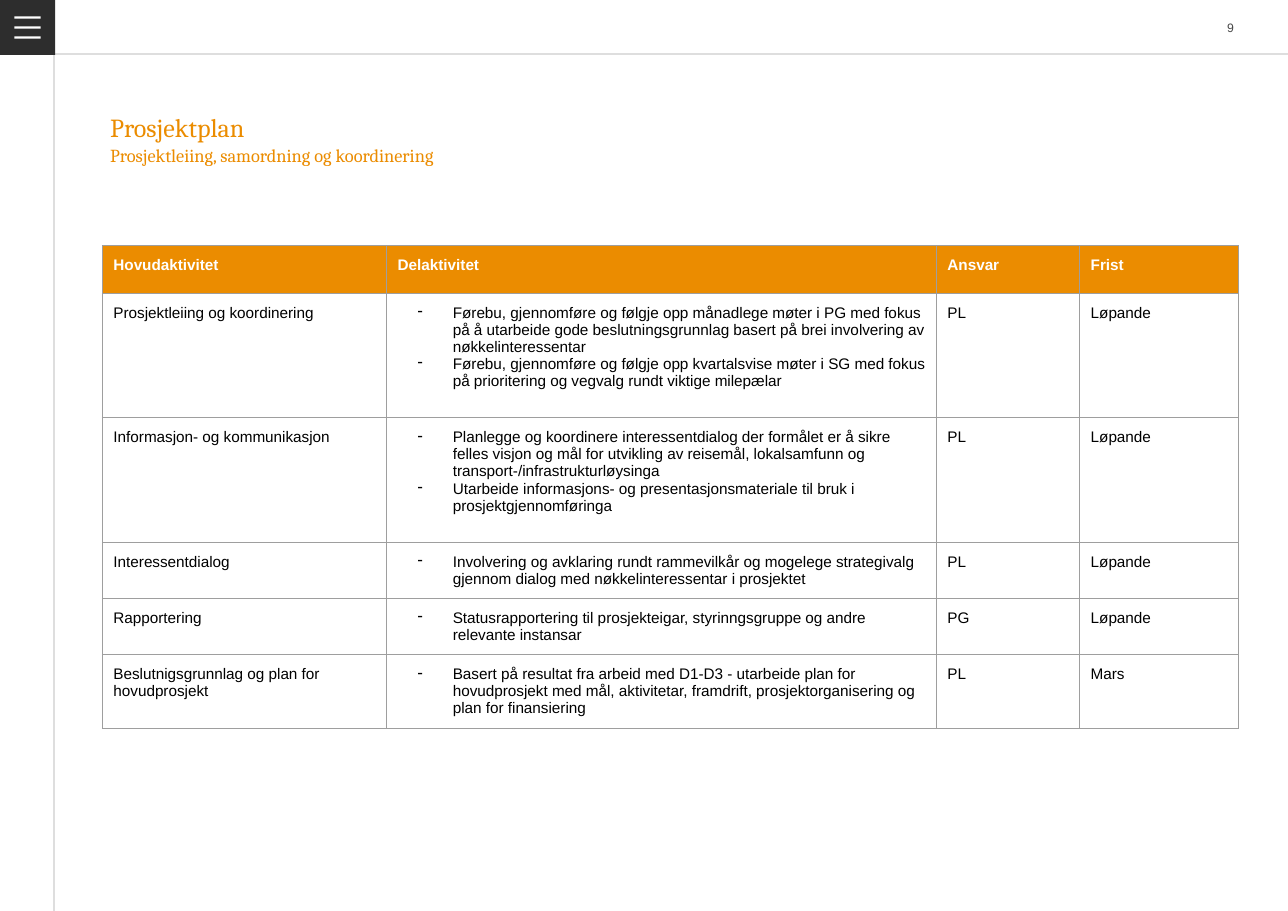
from dataclasses import dataclass

from lxml import etree
from pptx import Presentation
from pptx.dml.color import RGBColor
from pptx.enum.shapes import MSO_CONNECTOR, MSO_SHAPE
from pptx.enum.text import MSO_ANCHOR, MSO_AUTO_SIZE, PP_ALIGN
from pptx.oxml.ns import qn
from pptx.util import Inches, Pt

STRAIGHT = MSO_CONNECTOR.STRAIGHT
RECTANGLE = MSO_SHAPE.RECTANGLE
TOP, MIDDLE = MSO_ANCHOR.TOP, MSO_ANCHOR.MIDDLE
LEFT, RIGHT = PP_ALIGN.LEFT, PP_ALIGN.RIGHT
NO_AUTOFIT = MSO_AUTO_SIZE.NONE
TITLE_ONLY = 5

PAGE_WIDTH, PAGE_HEIGHT = 11.69, 8.27
MODULE = 0.5
PAGE_COLUMNS, PAGE_ROWS = PAGE_WIDTH / MODULE, PAGE_HEIGHT / MODULE

HEADINGS = ("Hovudaktivitet", "Delaktivitet", "Ansvar", "Frist")
ACTIVITIES = (
    ("Prosjektleiing og koordinering",
     ("Førebu, gjennomføre og følgje opp månadlege møter i PG med fokus på å utarbeide gode "
      "beslutningsgrunnlag basert på brei involvering av nøkkelinteressentar",
      "Førebu, gjennomføre og følgje opp kvartalsvise møter i SG med fokus på prioritering og "
      "vegvalg rundt viktige milepælar"),
     "PL", "Løpande"),
    ("Informasjon- og kommunikasjon",
     ("Planlegge og koordinere interessentdialog der formålet er å sikre felles visjon og mål for "
      "utvikling av reisemål, lokalsamfunn og transport-/infrastrukturløysinga",
      "Utarbeide informasjons- og presentasjonsmateriale til bruk i prosjektgjennomføringa"),
     "PL", "Løpande"),
    ("Interessentdialog",
     ("Involvering og avklaring rundt rammevilkår og mogelege strategivalg gjennom dialog med "
      "nøkkelinteressentar i prosjektet",),
     "PL", "Løpande"),
    ("Rapportering",
     ("Statusrapportering til prosjekteigar, styrinngsgruppe og andre relevante instansar",),
     "PG", "Løpande"),
    ("Beslutnigsgrunnlag og plan for hovudprosjekt",
     ("Basert på resultat fra arbeid med D1-D3 - utarbeide plan for hovudprosjekt med mål, "
      "aktivitetar, framdrift, prosjektorganisering og plan for finansiering",),
     "PL", "Mars"),
)
COLUMN_SPANS = (5.16, 9.98, 2.6, 2.88)
ROW_SPANS = (0.87, 2.26, 2.26, 1.02, 1.02, 1.32)


@dataclass(frozen=True)
class Theme:
    """Colours, fonts and type sizes of the plan."""
    accent: str = "EB8C00"
    dark: str = "2D2D2D"
    white: str = "FFFFFF"
    ink: str = "000000"
    number: str = "464646"
    rule: str = "DEDEDE"
    border: str = "9E9E9E"
    heading_font: str = "Cambria"
    body_font: str = "Arial"
    title_size: float = 17
    subtitle_size: float = 12
    table_size: float = 10
    number_size: float = 8
    line_width: float = 0.75


def grid(*spans):
    """Turn grid modules into lengths."""
    return [Inches(span * MODULE) for span in spans]


class PlanSlide:
    """Draws the plan's elements on one slide in one theme."""

    def __init__(self, slide, theme):
        """Keep the slide and the theme."""
        self.slide, self.theme = slide, theme

    def style(self, paragraph, size, colour, font, bold=False):
        """Format every run of a paragraph."""
        for run in paragraph.runs:
            run.font.size, run.font.name, run.font.bold = Pt(size), font, bold
            run.font.color.rgb = RGBColor.from_string(colour)

    def paint(self, shape, colour):
        """Give a shape a flat fill without outline or shadow."""
        shape.shadow.inherit = False
        shape.fill.solid()
        shape.fill.fore_color.rgb = RGBColor.from_string(colour)
        shape.line.fill.background()

    def frame(self, text_frame, anchor):
        """Remove the margins of a text frame and set its anchor."""
        text_frame.word_wrap = True
        text_frame.auto_size = NO_AUTOFIT
        text_frame.vertical_anchor = anchor
        text_frame.margin_left = text_frame.margin_right = 0
        text_frame.margin_top = text_frame.margin_bottom = 0

    def rule(self, *ends):
        """Draw a thin page rule."""
        rule = self.slide.shapes.add_connector(STRAIGHT, *grid(*ends))
        rule.line.color.rgb = RGBColor.from_string(self.theme.rule)
        rule.line.width = Pt(self.theme.line_width)
        etree.SubElement(rule._element.spPr, qn("a:effectLst"))

    def menu(self):
        """Draw the dark corner square with its three bars."""
        corner = self.slide.shapes.add_shape(RECTANGLE, *grid(0, 0, 1, 1))
        self.paint(corner, self.theme.dark)
        left, right, thickness = 0.26, 0.74, 0.04
        tops = [0.3 + 0.18 * bar for bar in range(3)]
        builder = self.slide.shapes.build_freeform(*grid(left, tops[0]), scale=1.0)
        for top in tops:
            builder.move_to(*grid(left, top))
            outline = ((left, top + thickness), (right, top + thickness), (right, top))
            builder.add_line_segments([grid(*point) for point in outline], close=True)
        self.paint(builder.convert_to_shape(), self.theme.white)

    def page_number(self, number, *box):
        """Write the page number at the right."""
        text_frame = self.slide.shapes.add_textbox(*grid(*box)).text_frame
        text_frame.text = number
        self.frame(text_frame, MIDDLE)
        text_frame.paragraphs[0].alignment = RIGHT
        self.style(text_frame.paragraphs[0], self.theme.number_size,
                   self.theme.number, self.theme.body_font)

    def title(self, heading, subheading, *box):
        """Place the heading and subheading in the title placeholder."""
        title = self.slide.shapes.title
        title.left, title.top, title.width, title.height = grid(*box)
        title.text_frame.text = f"{heading}\n{subheading}"
        self.frame(title.text_frame, TOP)
        sizes = (self.theme.title_size, self.theme.subtitle_size)
        for paragraph, size in zip(title.text_frame.paragraphs, sizes):
            paragraph.alignment, paragraph.line_spacing = LEFT, 1.05
            self.style(paragraph, size, self.theme.accent, self.theme.heading_font)

    def dash(self, paragraph):
        """Give a paragraph a hanging dash."""
        properties = paragraph._p.get_or_add_pPr()
        properties.set("marL", str(Inches(0.5)))
        properties.set("indent", str(Inches(-0.32)))
        colour = etree.SubElement(properties, qn("a:buClr"))
        etree.SubElement(colour, qn("a:srgbClr"), val=self.theme.ink)
        etree.SubElement(properties, qn("a:buChar"), char="-")

    def borders(self, cell):
        """Line all four sides of a cell."""
        properties = cell._tc.get_or_add_tcPr()
        for side in ("a:lnL", "a:lnR", "a:lnT", "a:lnB"):
            line = etree.SubElement(properties, qn(side), w=str(Pt(self.theme.line_width)))
            fill = etree.SubElement(line, qn("a:solidFill"))
            etree.SubElement(fill, qn("a:srgbClr"), val=self.theme.border)

    def cell(self, cell, content, header):
        """Fill one cell with plain text or a dashed list."""
        listed = isinstance(content, tuple)
        cell.text_frame.text = "\n".join(content) if listed else content
        cell.margin_left = cell.margin_right = Inches(0.1)
        cell.margin_top = cell.margin_bottom = Inches(0.1)
        self.borders(cell)
        if header:
            cell.fill.solid()
            cell.fill.fore_color.rgb = RGBColor.from_string(self.theme.accent)
        else:
            cell.fill.background()
        colour = self.theme.white if header else self.theme.ink
        for paragraph in cell.text_frame.paragraphs:
            self.style(paragraph, self.theme.table_size, colour, self.theme.body_font, header)
            if listed:
                self.dash(paragraph)

    def table(self, records, column_spans, row_spans, left, top):
        """Build the activity table with a header row."""
        box = grid(left, top, sum(column_spans), sum(row_spans))
        plan = self.slide.shapes.add_table(len(row_spans), len(column_spans), *box).table
        plan.horz_banding = False
        for column, width in zip(plan.columns, grid(*column_spans)):
            column.width = width
        for index, (row, height, record) in enumerate(zip(plan.rows, grid(*row_spans), records)):
            row.height = height
            for cell, content in zip(row.cells, record):
                self.cell(cell, content, index == 0)


def main():
    """Build and save the project plan."""
    presentation = Presentation()
    presentation.slide_width, presentation.slide_height = grid(PAGE_COLUMNS, PAGE_ROWS)
    layout = presentation.slide_layouts[TITLE_ONLY]
    plan = PlanSlide(presentation.slides.add_slide(layout), Theme())
    plan.rule(0, 0.98, PAGE_COLUMNS, 0.98)
    plan.rule(0.98, 0, 0.98, PAGE_ROWS)
    plan.menu()
    plan.page_number("9", 21.4, 0, 1, 1)
    plan.title("Prosjektplan", "Prosjektleiing, samordning og koordinering", 2, 2, 20.4, 1.16)
    plan.table((HEADINGS, *ACTIVITIES), COLUMN_SPANS, ROW_SPANS, 1.86, 4.46)
    presentation.save("out.pptx")


if __name__ == "__main__":
    main()
